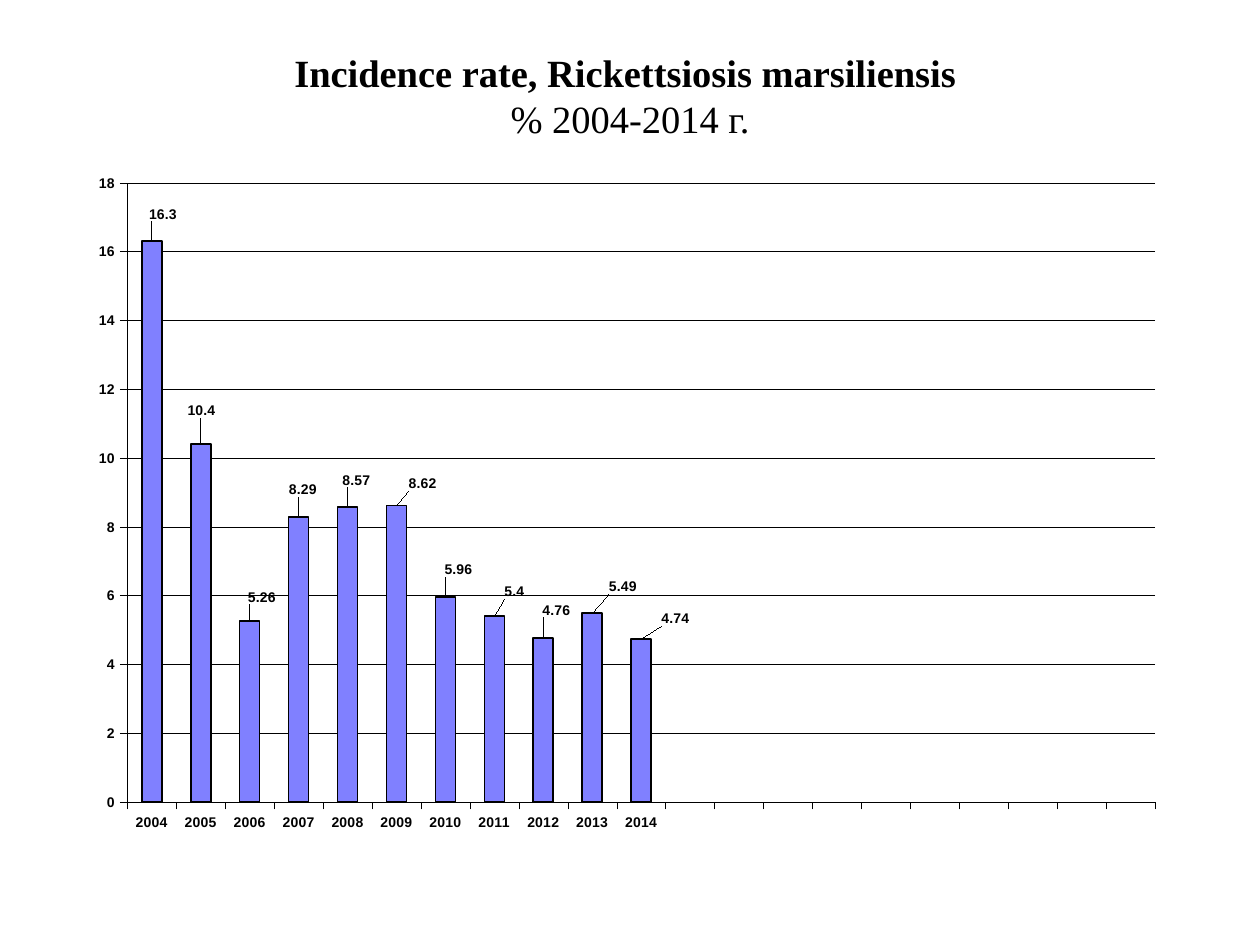
import pptx
import pptx.chart.data
import pptx.dml.color
import pptx.enum.chart
import pptx.enum.text
import pptx.oxml
import pptx.oxml.ns
import pptx.util

Pt = pptx.util.Pt
BLACK = pptx.dml.color.RGBColor(0, 0, 0)
BAR_BLUE = pptx.dml.color.RGBColor(0x80, 0x80, 0xFF)

TITLE = [("Incidence rate, Rickettsiosis marsiliensis ", True),
         ("% 2004-2014 г.", False)]
# year, rate, label shift right and down from its place above the bar (points)
RATES = [
    ("2004", 16.3, 6.5, -8.5),
    ("2005", 10.4, 0.5, -12),
    ("2006", 5.26, 7, -6.5),
    ("2007", 8.29, 2.5, -8.5),
    ("2008", 8.57, 5, -8.5),
    ("2009", 8.62, 15, -5.5),
    ("2010", 5.96, 7.5, -8.5),
    ("2011", 5.4, 11.5, -7),
    ("2012", 4.76, 7.5, -9),
    ("2013", 5.49, 17.5, -8),
    ("2014", 4.74, 19.5, -4.5),
]
EMPTY_YEARS = 10
CHART_LEFT, CHART_TOP, CHART_W, CHART_H = 48.25, 100, 612, 374.4
PLOT_AREA = {"x": 0.04, "y": 0.01, "w": 0.96, "h": 0.95}


def set_font(font, name="Arial", size=8, bold=True):
    font.name, font.size, font.bold = name, Pt(size), bold
    font.color.rgb = BLACK


def add_text(p, text, **fmt):
    r = p.add_run()
    r.text = text
    set_font(r.font, **fmt)


def set_line(line, width):
    line.color.rgb = BLACK
    line.width = Pt(width)


def manual_layout(settings):
    """Return a c:layout element holding the given name-value pairs."""
    items = "".join(f'<c:{k} val="{v}"/>' for k, v in settings.items())
    return pptx.oxml.parse_xml(
        f'<c:layout {pptx.oxml.ns.nsdecls("c")}>'
        f"<c:manualLayout>{items}</c:manualLayout></c:layout>")


def add_title(s):
    title = s.shapes.title
    title.left, title.top, title.width, title.height = Pt(54), Pt(15), Pt(612), Pt(79)
    tf = title.text_frame
    tf.vertical_anchor = pptx.enum.text.MSO_ANCHOR.MIDDLE
    p = tf.paragraphs[0]
    p.alignment = pptx.enum.text.PP_ALIGN.CENTER
    for i, (text, bold) in enumerate(TITLE):
        if i:
            p.add_line_break()
        add_text(p, text, name="Times New Roman", size=22, bold=bold)


def add_rate_chart(s):
    data = pptx.chart.data.CategoryChartData()
    data.categories = [row[0] for row in RATES] + [""] * EMPTY_YEARS
    data.add_series("Series 1", [row[1] for row in RATES] + [None] * EMPTY_YEARS)
    chart = s.shapes.add_chart(
        pptx.enum.chart.XL_CHART_TYPE.COLUMN_CLUSTERED,
        Pt(CHART_LEFT), Pt(CHART_TOP), Pt(CHART_W), Pt(CHART_H), data).chart
    chart.has_legend = chart.has_title = False
    set_font(chart.font)

    for axis in (chart.category_axis, chart.value_axis):
        axis.major_tick_mark = pptx.enum.chart.XL_TICK_MARK.OUTSIDE
        axis.minor_tick_mark = pptx.enum.chart.XL_TICK_MARK.NONE
        set_font(axis.tick_labels.font)
        set_line(axis.format.line, 0.25)
    chart.category_axis.tick_label_position = pptx.enum.chart.XL_TICK_LABEL_POSITION.LOW
    axis = chart.value_axis
    axis.minimum_scale, axis.maximum_scale, axis.major_unit = 0, 18, 2
    set_line(axis.major_gridlines.format.line, 0.25)

    plot = chart.plots[0]
    plot.gap_width = 145
    plot.vary_by_categories = False
    series = plot.series[0]
    series.format.fill.solid()
    series.format.fill.fore_color.rgb = BAR_BLUE
    set_line(series.format.line, 1)
    place_labels(chart, series)

    area = chart.element.xpath(".//c:plotArea")[0]
    for old in area.xpath("./c:layout"):
        area.remove(old)
    area.insert(0, manual_layout({"layoutTarget": "inner", "xMode": "edge",
                                  "yMode": "edge", **PLOT_AREA}))


def place_labels(chart, series):
    outside = pptx.enum.chart.XL_LABEL_POSITION.OUTSIDE_END
    labels = series.data_labels
    labels.show_value = True
    labels.position = outside
    set_font(labels.font)
    for i in range(len(RATES)):
        label = series.points[i].data_label
        set_font(label.font)
        label.position = outside
    for dlbl, (_, _, dx, dy) in zip(chart.element.xpath(".//c:dLbl"), RATES):
        dlbl.insert(1, manual_layout({"x": round(dx / CHART_W, 4),
                                      "y": round(dy / CHART_H, 4)}))


def main():
    prs = pptx.Presentation()
    prs.slide_width, prs.slide_height = Pt(720), Pt(540)
    s = prs.slides.add_slide(prs.slide_layouts[5])
    add_title(s)
    add_rate_chart(s)
    prs.save("out.pptx")


if __name__ == "__main__":
    main()
